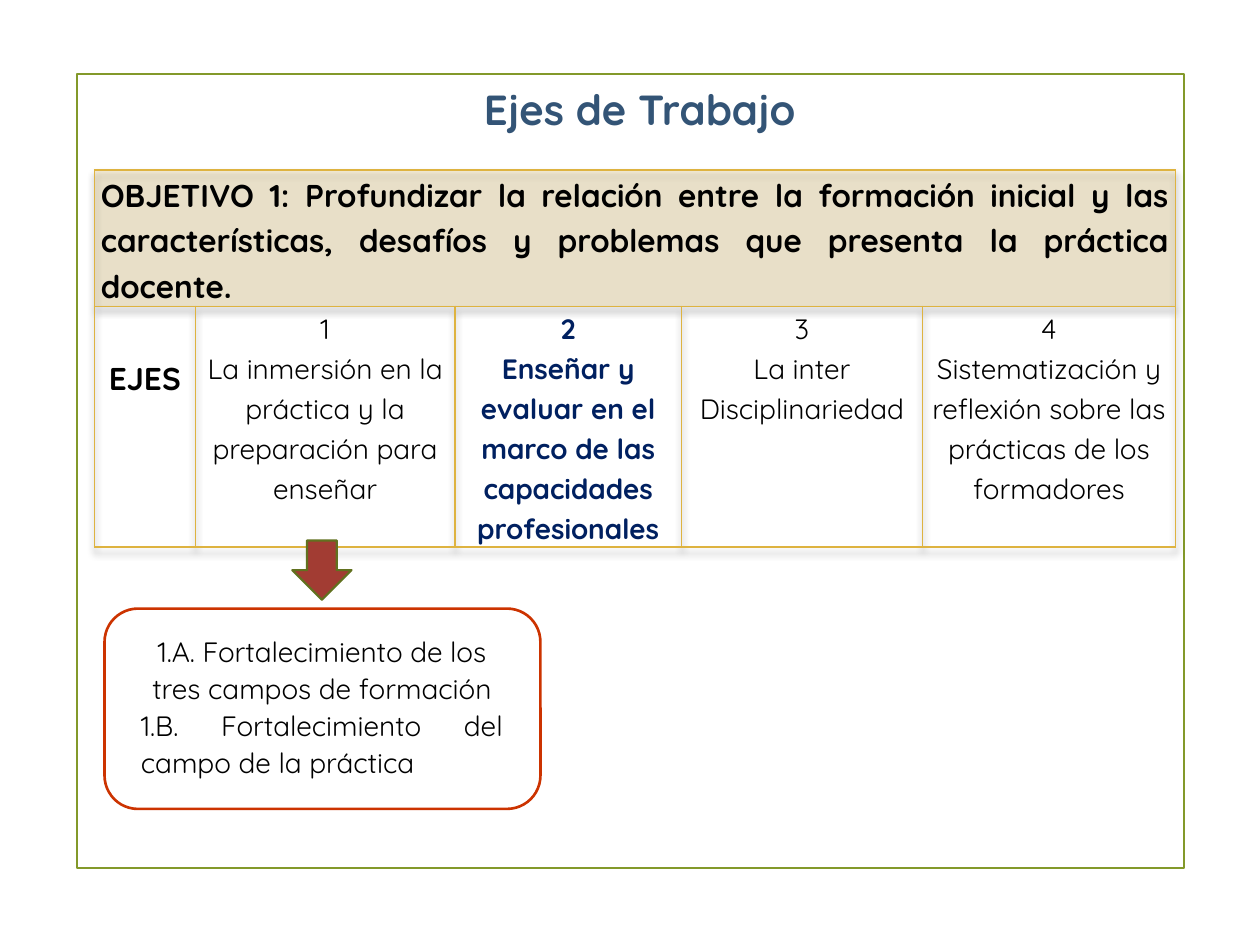
from dataclasses import dataclass
from lxml.etree import SubElement
from pptx import Presentation
from pptx.dml.color import RGBColor
from pptx.enum.shapes import MSO_SHAPE
from pptx.enum.text import MSO_ANCHOR, MSO_AUTO_SIZE, PP_ALIGN
from pptx.oxml import parse_xml
from pptx.oxml.ns import nsdecls, qn
from pptx.util import Inches, Pt


@dataclass(frozen=True)
class Theme:
    font: str = "Quicksand"
    frame: str = "83992A"
    title: str = "335476"
    gold: str = "DEB340"
    ink: str = "000000"
    navy: str = "002060"
    red: str = "CC3300"
    arrow: str = "A23C33"
    edge: str = "61711F"
    big: int = 24
    head: int = 18
    body: int = 16


@dataclass(frozen=True)
class Cell:
    lines: tuple[str, ...]
    width: float
    color: str = Theme.ink
    size: int = Theme.body
    bold: bool = False
    top: float = 0


@dataclass(frozen=True)
class Figure:
    kind: MSO_SHAPE
    box: tuple[float, float, float, float]
    line: str
    weight: float
    fill: str | None = None


T = Theme()
HEAD = ("OBJETIVO 1: Profundizar la relación entre la formación inicial y las "
        "características, desafíos y problemas que presenta la práctica docente.")
AXES = (
    Cell(("EJES",), 0.8, size=T.head, bold=True, top=0.37),
    Cell(("1", "La inmersión en la práctica y la preparación para enseñar"), 2.06),
    Cell(("2", "Enseñar y evaluar en el marco de las capacidades profesionales"),
         1.8, color=T.navy, bold=True),
    Cell(("3", "La inter", "Disciplinariedad"), 1.91),
    Cell(("4", "Sistematización y reflexión sobre las prácticas de los formadores"), 2.01),
)
ROWS = (1.08, 1.91)
NOTES = ("1.A. Fortalecimiento de los tres campos de formación",
         "1.B. Fortalecimiento del campo de la práctica")
FRAME = Figure(MSO_SHAPE.RECTANGLE, (0.61, 0.59, 8.79, 6.3), T.frame, 1.25)
FIGURES = (
    Figure(MSO_SHAPE.ROUNDED_RECTANGLE, (0.83, 4.83, 3.46, 1.59), T.red, 1.5),
    Figure(MSO_SHAPE.DOWN_ARROW, (2.32, 4.29, 0.47, 0.47), T.edge, 1.25, T.arrow),
)


def write(frame, lines, size, color=T.ink, bold=False,
          aligns=(PP_ALIGN.CENTER,), gap=1.15) -> None:
    """Fill a text frame; the last alignment holds for the remaining lines."""
    frame.text = "\n".join(lines)
    for i, para in enumerate(frame.paragraphs):
        para.alignment = aligns[min(i, len(aligns) - 1)]
        para.line_spacing = gap
        font = para.font
        font.name, font.size, font.bold = T.font, Pt(size), bold
        font.color.rgb = RGBColor.from_string(color)


def draw(slide, fig: Figure) -> None:
    shape = slide.shapes.add_shape(fig.kind, *map(Inches, fig.box))
    shape.shadow.inherit = False
    shape.line.color.rgb = RGBColor.from_string(fig.line)
    shape.line.width = Pt(fig.weight)
    if fig.fill:
        shape.fill.solid()
        shape.fill.fore_color.rgb = RGBColor.from_string(fig.fill)
    else:
        shape.fill.background()


def border(cell) -> None:
    props = cell._tc.get_or_add_tcPr()
    for side in ("lnL", "lnR", "lnT", "lnB"):
        props.append(parse_xml(
            f'<a:{side} {nsdecls("a")} w="12700"><a:solidFill>'
            f'<a:srgbClr val="{T.gold}"/></a:solidFill></a:{side}>'))


def style(cell, top: float = 0) -> None:
    cell.margin_left = cell.margin_right = Inches(0.05)
    cell.margin_top, cell.margin_bottom = Inches(top), 0
    border(cell)
    cell.fill.background()


def build(slide) -> None:
    widths = [axis.width for axis in AXES]
    table = slide.shapes.add_table(
        2, len(AXES), Inches(0.75), Inches(1.35),
        Inches(sum(widths)), Inches(sum(ROWS))).table
    table.first_row = table.horz_banding = False
    for row, height in zip(table.rows, ROWS):
        row.height = Inches(height)

    # Soft shadow under the whole table
    table._tbl.tblPr.insert(0, parse_xml(
        f'<a:effectLst {nsdecls("a")}><a:outerShdw blurRad="50800" dist="38100" '
        'dir="5400000" algn="t" rotWithShape="0"><a:srgbClr val="000000">'
        '<a:alpha val="40000"/></a:srgbClr></a:outerShdw></a:effectLst>'))

    # Axis cells
    for i, axis in enumerate(AXES):
        table.columns[i].width = Inches(axis.width)
        style(table.cell(0, i))
        cell = table.cell(1, i)
        style(cell, axis.top)
        write(cell.text_frame, axis.lines, axis.size, axis.color, axis.bold)

    # Merged objective row with a translucent fill
    head = table.cell(0, 0)
    head.merge(table.cell(0, len(AXES) - 1))
    head.fill.solid()
    head.fill.fore_color.rgb = RGBColor.from_string(T.gold)
    tint = head._tc.tcPr.find(qn("a:solidFill"))[0]
    SubElement(tint, qn("a:alpha")).set("val", "20000")
    write(head.text_frame, (HEAD,), T.head, bold=True, aligns=(PP_ALIGN.JUSTIFY,))


def main() -> None:
    deck = Presentation()
    deck.slide_width, deck.slide_height = Inches(10), Inches(7.5)
    slide = deck.slides.add_slide(deck.slide_layouts[5])
    draw(slide, FRAME)
    build(slide)

    # Title
    title = slide.shapes.title
    title.left, title.top, title.width, title.height = map(
        Inches, (3.74, 0.61, 2.68, 0.5))
    frame = title.text_frame
    frame.word_wrap = False
    frame.auto_size = MSO_AUTO_SIZE.NONE
    frame.vertical_anchor = MSO_ANCHOR.TOP
    write(frame, ("Ejes de Trabajo",), T.big, T.title, True, (PP_ALIGN.LEFT,), 1.0)

    # Notes on the first axis
    notes = slide.shapes.add_textbox(*map(Inches, (1.02, 4.96, 3.07, 1.34))).text_frame
    notes.word_wrap = True
    write(notes, NOTES, T.body, aligns=(PP_ALIGN.CENTER, PP_ALIGN.JUSTIFY), gap=1.1)

    # Outline and arrow
    for fig in FIGURES:
        draw(slide, fig)
    deck.save("out.pptx")


if __name__ == "__main__":
    main()
